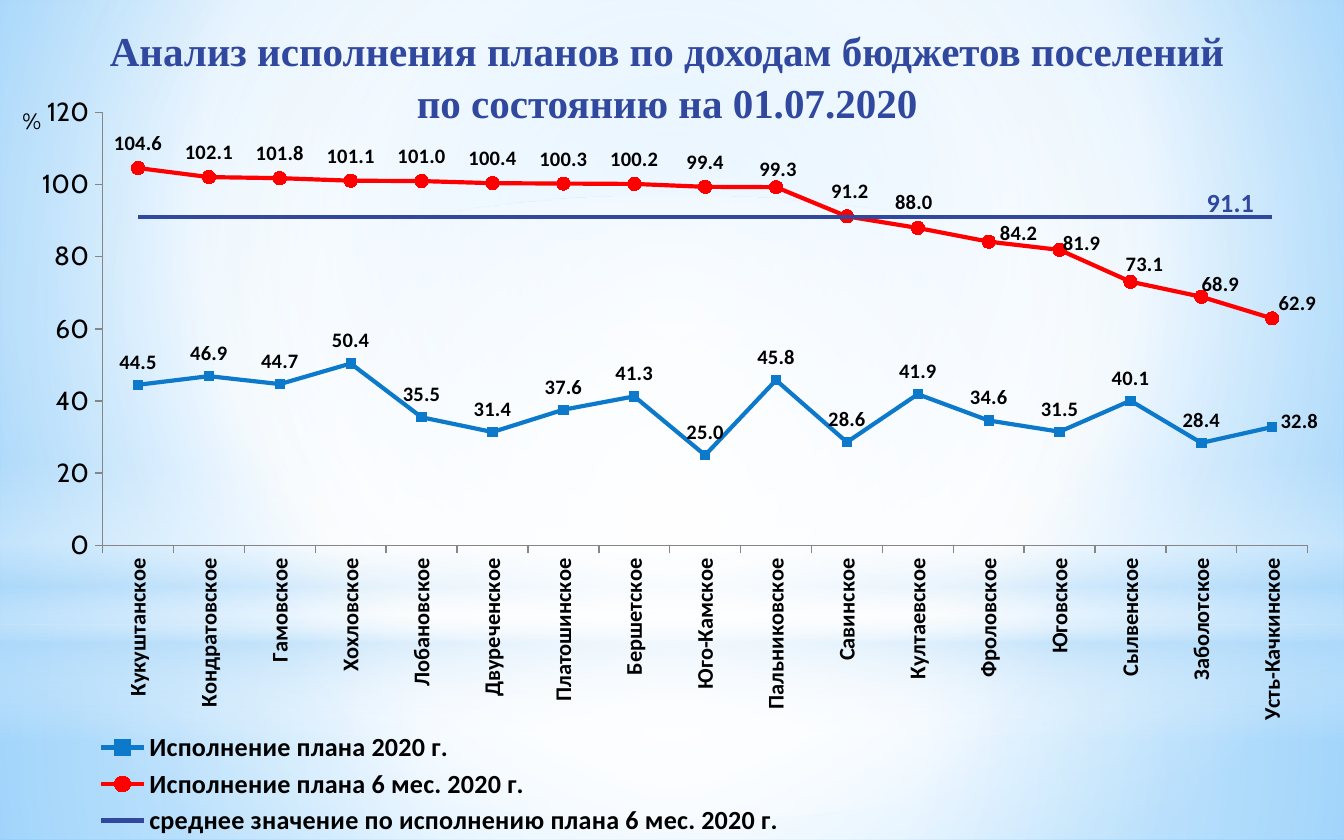
from dataclasses import dataclass
from typing import Optional

from lxml import etree
from pptx import Presentation
from pptx import util as u
from pptx.chart.data import CategoryChartData
from pptx.dml.color import RGBColor
from pptx.enum import chart as ch
from pptx.enum import shapes, text
from pptx.oxml import parse_xml
from pptx.oxml.ns import nsdecls, qn

PX = 914400 / 134.4
BLUE = RGBColor(0x0D, 0x79, 0xCA)
RED = RGBColor(0xFF, 0x00, 0x00)
NAVY = RGBColor(0x31, 0x48, 0x9F)
BLACK = RGBColor(0x00, 0x00, 0x00)
GREY = RGBColor(0x86, 0x86, 0x86)
WHITE = RGBColor(0xFF, 0xFF, 0xFF)
PALE = RGBColor(0xB4, 0xDC, 0xFA)
SKY = RGBColor(0x9E, 0xD5, 0xFF)
AZURE = RGBColor(0x5B, 0xB9, 0xFF)
CENTRE = (50, 50, 50, 50)


@dataclass
class Gradient:
    """Stops are (position %, colour, opacity %); no focus means top to bottom."""
    stops: list[tuple[int, RGBColor, int]]
    focus: Optional[tuple[int, int, int, int]] = CENTRE


@dataclass
class Glow:
    outline: shapes.MSO_SHAPE
    top: int
    height: int
    gradient: Gradient


@dataclass
class Line:
    name: str
    values: list[float]
    color: RGBColor
    marker: ch.XL_MARKER_STYLE
    marker_size: int
    label_size: int
    shifts: dict[int, tuple[int, int]]  # point index: label shift in px
    label_all: bool = True


CHART_BOX = (5, 83, 1339, 758)
BACKDROP = Gradient([(0, SKY, 100), (60, WHITE, 100), (100, AZURE, 100)], (20, 10, 20, 60))
RECT, OVAL = shapes.MSO_SHAPE.RECTANGLE, shapes.MSO_SHAPE.OVAL
GLOWS = [
    Glow(RECT, 625, 215, Gradient([(0, WHITE, 91), (37, WHITE, 76), (100, PALE, 79)])),
    Glow(RECT, 0, 625, Gradient([(0, WHITE, 89), (48, WHITE, 62), (100, PALE, 79)])),
    Glow(RECT, 461, 280, Gradient([(0, WHITE, 0), (29, WHITE, 30), (45, PALE, 40),
                                   (55, WHITE, 26), (65, PALE, 60), (100, WHITE, 0)], None)),
    Glow(OVAL, 196, 625, Gradient([(0, WHITE, 100), (56, WHITE, 0)])),
]
SETTLEMENTS = [
    "Кукуштанское", "Кондратовское", "Гамовское", "Хохловское", "Лобановское", "Двуреченское",
    "Платошинское", "Бершетское", "Юго-Камское", "Пальниковское", "Савинское", "Култаевское",
    "Фроловское", "Юговское", "Сылвенское", "Заболотское", "Усть-Качкинское",
]
LINES = [
    Line("Исполнение плана 2020 г.",
         [44.5, 46.9, 44.7, 50.4, 35.5, 31.4, 37.6, 41.3, 25, 45.8, 28.6, 41.9, 34.6, 31.5,
          40.1, 28.4, 32.8],
         BLUE, ch.XL_MARKER_STYLE.SQUARE, 5, 11, {16: (27, 17)}),
    Line("Исполнение плана 6 мес. 2020 г.",
         [104.6, 102.1, 101.8, 101.1, 101, 100.4, 100.3, 100.2, 99.4, 99.3, 91.2, 88, 84.2,
          81.9, 73.1, 68.9, 62.9],
         RED, ch.XL_MARKER_STYLE.CIRCLE, 7, 11,
         {9: (2, 7), 10: (3, -1), 11: (-4, -1), 12: (30, 16), 13: (22, 18), 14: (14, 7),
          15: (19, 12), 16: (25, 9)}),
    Line("среднее значение по исполнению плана 6 мес. 2020 г.", [91.1] * len(SETTLEMENTS),
         NAVY, ch.XL_MARKER_STYLE.NONE, 5, 14, {15: (29, 8)}, label_all=False),
]


def px(length: int) -> u.Emu:
    return u.Emu(round(length * PX))


def set_font(font, size: int, name: str, bold: bool = False, color: RGBColor = BLACK) -> None:
    font.size, font.name, font.bold = u.Pt(size), name, bold
    font.color.rgb = color


def paint(holder: etree._Element, gradient: Gradient) -> None:
    """Put a gradient in the place of the holder's solid fill."""
    stops = "".join(
        f'<a:gs pos="{place * 1000}"><a:srgbClr val="{color}"><a:alpha val="{alpha * 1000}"/>'
        f"</a:srgbClr></a:gs>" for place, color, alpha in gradient.stops)
    if gradient.focus:
        sides = " ".join(f'{side}="{part * 1000}"' for side, part in zip("ltrb", gradient.focus))
        course = f'<a:path path="circle"><a:fillToRect {sides}/></a:path>'
    else:
        course = '<a:lin ang="5400000" scaled="0"/>'
    fill = parse_xml(f'<a:gradFill {nsdecls("a")} rotWithShape="1"><a:gsLst>{stops}</a:gsLst>'
                     f"{course}</a:gradFill>")
    holder.replace(holder.find(qn("a:solidFill")), fill)


def layout_xml(**parts: object) -> etree._Element:
    settings = "".join(f'<c:{key} val="{value}"/>' for key, value in parts.items())
    return parse_xml(f'<c:layout {nsdecls("c")}><c:manualLayout>{settings}'
                     f"</c:manualLayout></c:layout>")


def set_layout(element: etree._Element, position: int, **parts: object) -> None:
    """Give a chart part a manual layout as its child at the given position."""
    for old in element.findall(qn("c:layout")):
        element.remove(old)
    element.insert(position, layout_xml(**parts))


def draw_backdrop(page) -> None:
    page.background.fill.solid()
    paint(page.element.find(".//" + qn("p:bgPr")), BACKDROP)
    for glow in GLOWS:
        shape = page.shapes.add_shape(glow.outline, 0, px(glow.top), px(1344), px(glow.height))
        shape.shadow.inherit = False
        shape.line.fill.background()
        shape.fill.solid()
        paint(shape.element.spPr, glow.gradient)


def draw_title(page) -> None:
    title = page.shapes.title
    title.element.getparent().append(title.element)  # in front of the backdrop
    title.left, title.top, title.width, title.height = map(px, (21, 15, 1292, 120))
    frame = title.text_frame
    frame.text = "Анализ исполнения планов по доходам бюджетов поселений\vпо состоянию на 01.07.2020"
    frame.word_wrap = True
    frame.auto_size = text.MSO_AUTO_SIZE.NONE
    frame.vertical_anchor = text.MSO_ANCHOR.MIDDLE
    para = frame.paragraphs[0]
    para.alignment = text.PP_ALIGN.CENTER
    para.line_spacing = 1.05
    for span in para.runs:
        set_font(span.font, 22, "Times New Roman", True, NAVY)


def format_line(chart, number: int, line: Line) -> None:
    series = chart.plots[0].series[number]
    series.smooth = False
    series.format.line.color.rgb = line.color
    series.format.line.width = u.Pt(2.25)
    series.marker.style = line.marker
    series.marker.size = line.marker_size
    series.marker.format.fill.solid()
    series.marker.format.fill.fore_color.rgb = line.color
    series.marker.format.line.color.rgb = line.color
    label_color = BLACK if line.label_all else line.color
    labels = series.data_labels
    labels.show_value = line.label_all
    labels.number_format, labels.number_format_is_linked = "#,##0.0", False
    labels.position = ch.XL_LABEL_POSITION.ABOVE
    set_font(labels.font, line.label_size, "Calibri", True, label_color)
    for index, (across, down) in line.shifts.items():
        label = series.points[index].data_label
        label.position = ch.XL_LABEL_POSITION.ABOVE
        set_font(label.font, line.label_size, "Calibri", True, label_color)
        node = chart.element.xpath(f'.//c:ser[{number + 1}]//c:dLbl[c:idx/@val="{index}"]')[0]
        set_layout(node, 1, x=round(across / CHART_BOX[2], 4), y=round(down / CHART_BOX[3], 4))


def format_axes(chart) -> None:
    names, values = chart.category_axis, chart.value_axis
    for axis in (names, values):
        axis.has_major_gridlines = False
        axis.major_tick_mark = ch.XL_TICK_MARK.OUTSIDE
        axis.format.line.color.rgb = GREY
    set_font(names.tick_labels.font, 12, "Calibri", True)
    turned = chart.element.find(".//" + qn("c:catAx")).find(f"{qn('c:txPr')}/{qn('a:bodyPr')}")
    turned.set("rot", "-5400000")
    turned.set("vert", "horz")
    set_font(values.tick_labels.font, 14, "Cabin")
    values.tick_labels.number_format = "#,##0"
    values.tick_labels.number_format_is_linked = False
    values.minimum_scale, values.maximum_scale, values.major_unit = 0, 120, 20
    frame = values.axis_title.text_frame
    frame.text = "%"
    set_font(frame.paragraphs[0].runs[0].font, 12, "Cabin")
    heading = chart.element.find(".//" + qn("c:valAx")).find(qn("c:title"))
    heading.find(".//" + qn("a:bodyPr")).set("rot", "0")
    set_layout(heading, 1, xMode="edge", yMode="edge", x=0.01, y=0.025)


def draw_chart(page) -> None:
    data = CategoryChartData(number_format="#,##0.0")
    data.categories = SETTLEMENTS
    for line in LINES:
        data.add_series(line.name, line.values)
    chart = page.shapes.add_chart(ch.XL_CHART_TYPE.LINE_MARKERS, *map(px, CHART_BOX), data).chart
    set_font(chart.font, 18, "Cabin")
    chart.has_title = False
    chart.plots[0].vary_by_categories = False
    for number, line in enumerate(LINES):
        format_line(chart, number, line)
    format_axes(chart)
    set_layout(chart.element.find(".//" + qn("c:plotArea")), 0, layoutTarget="inner",
               xMode="edge", yMode="edge", x=0.073, y=0.039, w=0.9, h=0.571)
    chart.has_legend = True
    chart.legend.position = ch.XL_LEGEND_POSITION.BOTTOM
    chart.legend.include_in_layout = False
    set_font(chart.legend.font, 14, "Calibri", True)
    set_layout(chart.element.find(".//" + qn("c:legend")), 1,
               xMode="edge", yMode="edge", x=0.05, y=0.85, w=0.55, h=0.15)


def main() -> None:
    deck = Presentation()
    deck.slide_width, deck.slide_height = px(1344), px(840)
    page = deck.slides.add_slide(deck.slide_layouts[5])
    draw_backdrop(page)
    draw_title(page)
    draw_chart(page)
    deck.save("out.pptx")


if __name__ == "__main__":
    main()
